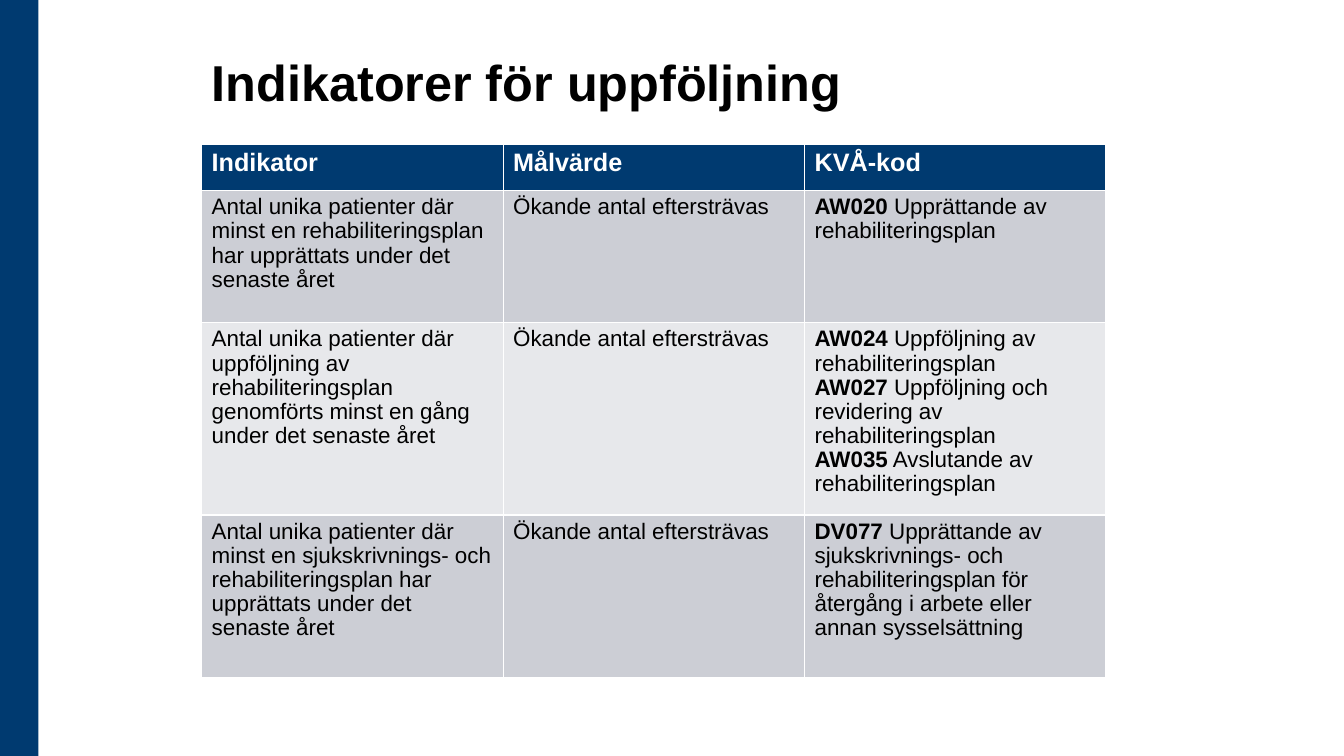
from dataclasses import dataclass

from pptx import Presentation
from pptx.dml.color import RGBColor
from pptx.enum.shapes import MSO_SHAPE
from pptx.enum.text import MSO_ANCHOR, PP_ALIGN
from pptx.util import Inches, Pt

RECT = MSO_SHAPE.RECTANGLE
BOTTOM = MSO_ANCHOR.BOTTOM
LEFT = PP_ALIGN.LEFT


@dataclass(frozen=True)
class Theme:
    font: str = "Arial"
    navy: RGBColor = RGBColor(0x00, 0x3A, 0x70)
    white: RGBColor = RGBColor(0xFF, 0xFF, 0xFF)
    black: RGBColor = RGBColor(0x00, 0x00, 0x00)
    bands: tuple = (RGBColor(0xCC, 0xCE, 0xD5), RGBColor(0xE7, 0xE8, 0xEB))
    title: Pt = Pt(36)
    header: Pt = Pt(18)
    body: Pt = Pt(16)


THEME = Theme()


def style_run(r, size, color, bold):
    r.font.name = THEME.font
    r.font.size = size
    r.font.color.rgb = color
    r.font.bold = bold


prs = Presentation()
prs.slide_width = Inches(13.33)
prs.slide_height = Inches(7.5)
slide = prs.slides.add_slide(prs.slide_layouts[5])

# Side bar
bar = slide.shapes.add_shape(RECT, 0, 0, Inches(0.38), prs.slide_height)
bar.shadow.inherit = False
bar.fill.solid()
bar.fill.fore_color.rgb = THEME.navy
bar.line.fill.background()

# Title
title = slide.shapes.title
title.left, title.top = Inches(2), Inches(0.4)
title.width, title.height = Inches(8.6), Inches(0.76)
tf = title.text_frame
tf.text = "Indikatorer för uppföljning"
tf.vertical_anchor = BOTTOM
p = tf.paragraphs[0]
p.alignment = LEFT
style_run(p.runs[0], THEME.title, THEME.black, True)

# Table content: each cell is a list of (bold, plain) paragraphs
TARGET = [("", "Ökande antal eftersträvas")]
rows = [
    [[("Indikator", "")], [("Målvärde", "")], [("KVÅ-kod", "")]],
    [
        [("", "Antal unika patienter där minst en rehabiliteringsplan "
              "har upprättats under det senaste året")],
        TARGET,
        [("AW020", " Upprättande av rehabiliteringsplan")],
    ],
    [
        [("", "Antal unika patienter där uppföljning av rehabiliteringsplan "
              "genomförts minst en gång under det senaste året")],
        TARGET,
        [("AW024", " Uppföljning av rehabiliteringsplan"),
         ("AW027", " Uppföljning och revidering av rehabiliteringsplan"),
         ("AW035", " Avslutande av rehabiliteringsplan")],
    ],
    [
        [("", "Antal unika patienter där minst en sjukskrivnings- och "
              "rehabiliteringsplan har upprättats under det senaste året")],
        TARGET,
        [("DV077", " Upprättande av sjukskrivnings- och rehabiliteringsplan "
                   "för återgång i arbete eller annan sysselsättning")],
    ],
]
row_heights = [0.46, 1.31, 1.91, 1.61]

# Table: the default style supplies the white cell borders
table = slide.shapes.add_table(
    len(rows), 3, Inches(2), Inches(1.43), Inches(8.97), Inches(sum(row_heights))
).table
for col in table.columns:
    col.width = Inches(2.99)

for i, (cells, height) in enumerate(zip(rows, row_heights)):
    table.rows[i].height = Inches(height)
    is_header = i == 0
    fill = THEME.navy if is_header else THEME.bands[(i - 1) % 2]
    size = THEME.header if is_header else THEME.body
    color = THEME.white if is_header else THEME.black
    for j, paragraphs in enumerate(cells):
        cell = table.cell(i, j)
        cell.fill.solid()
        cell.fill.fore_color.rgb = fill
        tf = cell.text_frame
        for k, (strong, plain) in enumerate(paragraphs):
            p = tf.add_paragraph() if k else tf.paragraphs[0]
            p.line_spacing = 0.97
            for text, bold in ((strong, True), (plain, False)):
                if text:
                    r = p.add_run()
                    r.text = text
                    style_run(r, size, color, bold)

prs.save("out.pptx")
